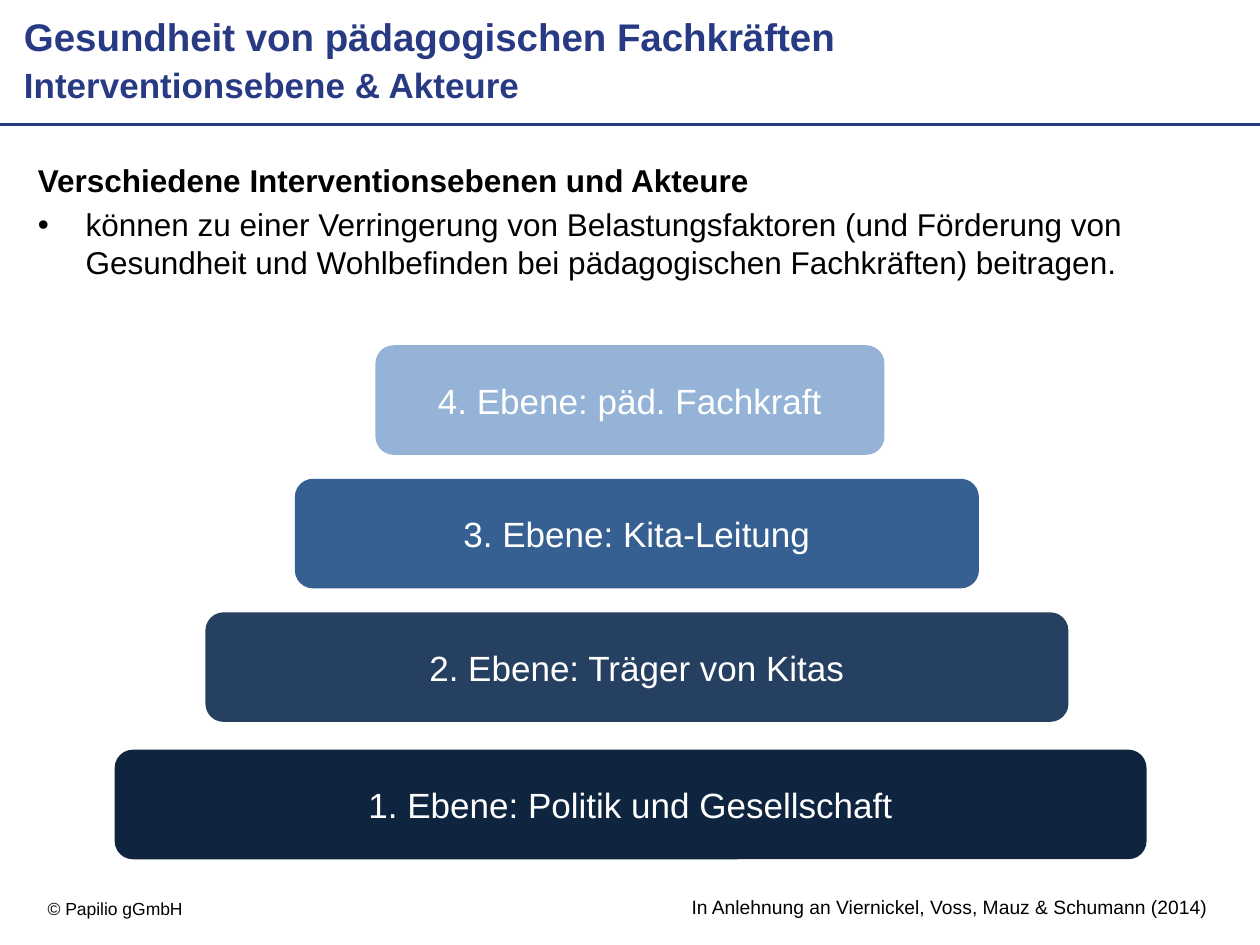
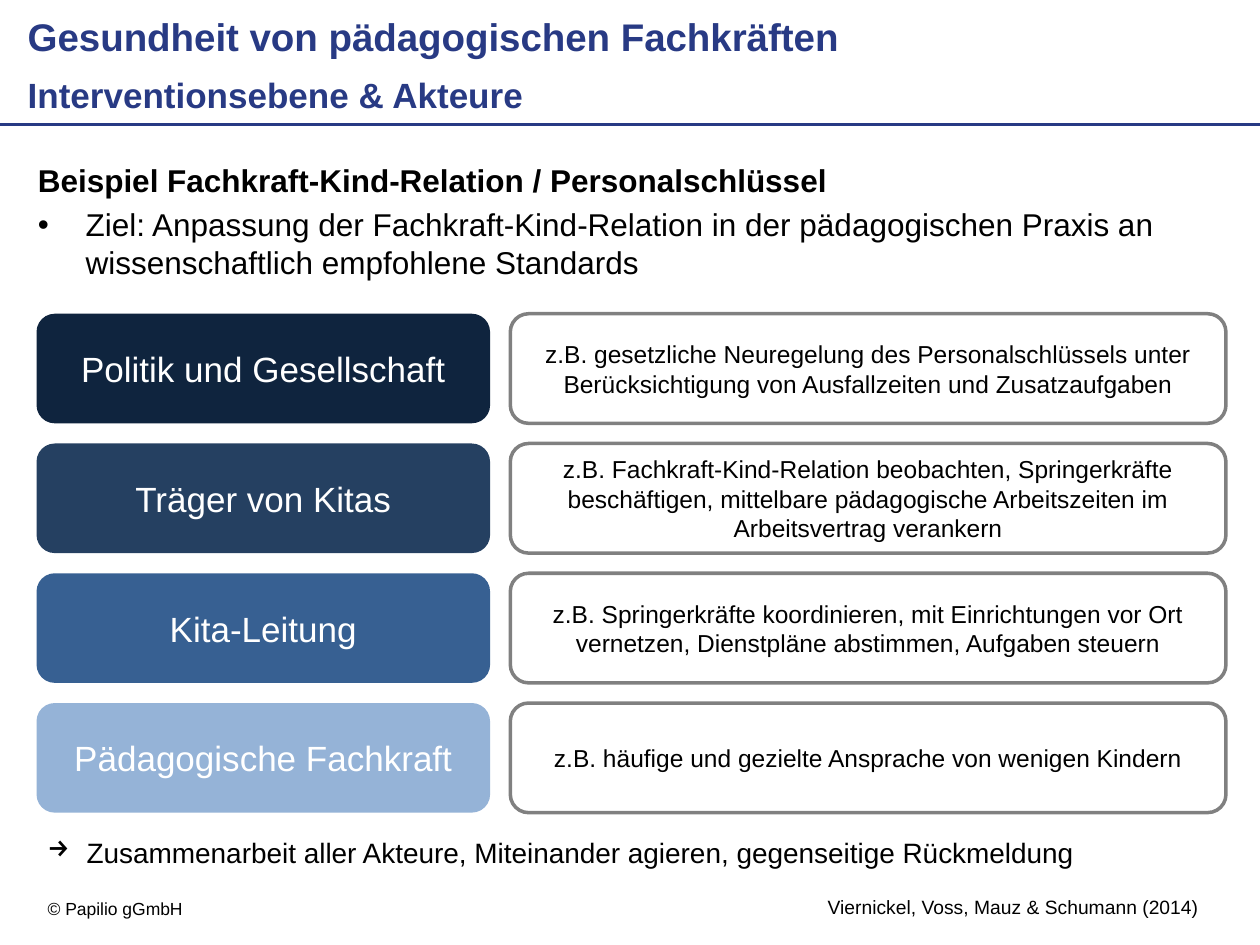
"""Build two slides on intervention levels for the health of educational staff."""
from dataclasses import dataclass
from typing import Optional

from lxml import etree
from pptx import Presentation
from pptx.dml.color import RGBColor
from pptx.enum.shapes import MSO_CONNECTOR, MSO_SHAPE
from pptx.enum.text import MSO_ANCHOR, MSO_AUTO_SIZE, PP_ALIGN
from pptx.oxml.ns import qn
from pptx.util import Inches, Pt

ROUNDED = MSO_SHAPE.ROUNDED_RECTANGLE
STRAIGHT = MSO_CONNECTOR.STRAIGHT
LEFT, CENTER = PP_ALIGN.LEFT, PP_ALIGN.CENTER
TOP, MIDDLE = MSO_ANCHOR.TOP, MSO_ANCHOR.MIDDLE
NO_FIT = MSO_AUTO_SIZE.NONE
TWO_CONTENT = 3


@dataclass(frozen=True)
class Theme:
    font: str = "Arial"
    brand: str = "283A84"
    ink: str = "000000"
    paper: str = "FFFFFF"
    outline: str = "808080"
    politics: str = "0F243E"
    provider: str = "254061"
    leader: str = "376092"
    staff: str = "95B3D7"
    title: int = 22
    subtitle: int = 20
    body: int = 18
    level: int = 20
    conclusion: int = 16
    detail: int = 14
    source: int = 11
    footer: int = 10
    rule: int = 2


T = Theme()


@dataclass(frozen=True)
class Area:
    x: float
    y: float
    w: float
    h: float

    def lengths(self) -> tuple:
        """Return left, top, width and height as lengths."""
        return tuple(Inches(v) for v in (self.x, self.y, self.w, self.h))


@dataclass(frozen=True)
class Line:
    text: str
    size: int
    color: str = T.ink
    bold: bool = False
    align: PP_ALIGN = LEFT
    bullet: Optional[str] = None
    indent: float = 0
    before: float = 0


@dataclass(frozen=True)
class Page:
    title_area: Area
    subtitle_area: Area
    heading: str
    point: str
    source: str
    source_area: Area


@dataclass(frozen=True)
class Level:
    label: str
    color: str
    area: Area


@dataclass(frozen=True)
class Measure:
    actor: str
    color: str
    example: str


TITLE = "Gesundheit von pädagogischen Fachkräften"
SUBTITLE = "Interventionsebene & Akteure"
BODY_AREA = Area(0.2, 1.23, 9.61, 5.63)
FOOTER_AREA = Area(0.28, 7.08, 2.17, 0.27)
CONCLUSION_AREA = Area(0.28, 6.58, 9.46, 0.37)
BOX_H = 0.87
ROW_TOP, ROW_STEP = 2.49, 1.03
ACTOR_X, ACTOR_W = 0.29, 3.6
EXAMPLE_X, EXAMPLE_W = 4.05, 5.68

LEVELS_PAGE = Page(
    Area(0.09, 0.05, 6.93, 0.49),
    Area(0.09, 0.45, 5.12, 0.47),
    "Verschiedene Interventionsebenen und Akteure",
    "können zu einer Verringerung von Belastungsfaktoren (und Förderung von "
    "Gesundheit und Wohlbefinden bei pädagogischen Fachkräften) beitragen.",
    "In Anlehnung an Viernickel, Voss, Mauz & Schumann (2014)",
    Area(5.39, 7.06, 4.34, 0.29),
)
EXAMPLE_PAGE = Page(
    Area(0.12, 0.05, 7.17, 0.49),
    Area(0.12, 0.53, 4.88, 0.46),
    "Beispiel Fachkraft-Kind-Relation / Personalschlüssel",
    "Ziel: Anpassung der Fachkraft-Kind-Relation in der pädagogischen Praxis an "
    "wissenschaftlich empfohlene Standards",
    "Viernickel, Voss, Mauz & Schumann (2014)",
    Area(6.47, 7.06, 3.18, 0.29),
)
LEVELS = [
    Level("1. Ebene: Politik und Gesellschaft", T.politics, Area(0.91, 5.95, 8.19, BOX_H)),
    Level("2. Ebene: Träger von Kitas", T.provider, Area(1.63, 4.86, 6.85, BOX_H)),
    Level("3. Ebene: Kita-Leitung", T.leader, Area(2.34, 3.8, 5.43, BOX_H)),
    Level("4. Ebene: päd. Fachkraft", T.staff, Area(2.98, 2.74, 4.04, BOX_H)),
]
MEASURES = [
    Measure("Politik und Gesellschaft", T.politics,
            "z.B. gesetzliche Neuregelung des Personalschlüssels unter "
            "Berücksichtigung von Ausfallzeiten und Zusatzaufgaben"),
    Measure("Träger von Kitas", T.provider,
            "z.B. Fachkraft-Kind-Relation beobachten, Springerkräfte beschäftigen, "
            "mittelbare pädagogische Arbeitszeiten im Arbeitsvertrag verankern"),
    Measure("Kita-Leitung", T.leader,
            "z.B. Springerkräfte koordinieren, mit Einrichtungen vor Ort vernetzen, "
            "Dienstpläne abstimmen, Aufgaben steuern"),
    Measure("Pädagogische Fachkraft", T.staff,
            "z.B. häufige und gezielte Ansprache von wenigen Kindern"),
]
CONCLUSION = "Zusammenarbeit aller Akteure, Miteinander agieren, gegenseitige Rückmeldung"


def rgb(color: str) -> RGBColor:
    """Turn a hex string into a colour."""
    return RGBColor.from_string(color)


def set_all(obj, values: dict) -> None:
    """Set each named attribute on an object."""
    for name, value in values.items():
        setattr(obj, name, value)


def write(sp, lines: list[Line], anchor=TOP, wrap: bool = True) -> None:
    """Fill a shape with formatted paragraphs."""
    tf = sp.text_frame
    set_all(tf, {"auto_size": NO_FIT, "word_wrap": wrap, "vertical_anchor": anchor})
    for i, line in enumerate(lines):
        p = tf.add_paragraph() if i else tf.paragraphs[0]
        pPr = p._p.get_or_add_pPr()
        pPr.set("marL", str(Inches(line.indent)))
        pPr.set("indent", str(-Inches(line.indent)))
        if line.bullet:
            etree.SubElement(pPr, qn("a:buChar")).set("char", line.bullet)
        else:
            etree.SubElement(pPr, qn("a:buNone"))
        set_all(p, {"alignment": line.align, "space_before": Pt(line.before)})
        r = p.add_run()
        r.text = line.text
        set_all(r.font, {"name": T.font, "size": Pt(line.size), "bold": line.bold})
        r.font.color.rgb = rgb(line.color)


def place(sp, area: Area, lines: list[Line]) -> None:
    """Move a placeholder and fill it."""
    set_all(sp, dict(zip(("left", "top", "width", "height"), area.lengths())))
    write(sp, lines)


def add_text(slide, area: Area, line: Line, wrap: bool = True) -> None:
    """Add a text box with one paragraph."""
    write(slide.shapes.add_textbox(*area.lengths()), [line], wrap=wrap)


def add_box(slide, area: Area, line: Line, fill: Optional[str] = None) -> None:
    """Add a rounded box, filled or outlined."""
    sp = slide.shapes.add_shape(ROUNDED, *area.lengths())
    sp.shadow.inherit = False
    if fill:
        sp.fill.solid()
        sp.fill.fore_color.rgb = rgb(fill)
        sp.line.fill.background()
    else:
        sp.fill.background()
        sp.line.color.rgb = rgb(T.outline)
        sp.line.width = Pt(T.rule)
    write(sp, [line], MIDDLE)


def add_level(slide, area: Area, label: str, color: str) -> None:
    """Add the coloured box of one level."""
    add_box(slide, area, Line(label, T.level, T.paper, align=CENTER), color)


def add_page(prs, page: Page):
    """Add a slide with header, rule, body text, source and footer."""
    slide = prs.slides.add_slide(prs.slide_layouts[TWO_CONTENT])
    title, subtitle, body = slide.placeholders
    place(title, page.title_area, [Line(TITLE, T.title, T.brand, True)])
    place(subtitle, page.subtitle_area, [Line(SUBTITLE, T.subtitle, T.brand, True)])
    place(body, BODY_AREA, [
        Line(page.heading, T.body, bold=True),
        Line(page.point, T.body, bullet="•", indent=0.38, before=3.6),
    ])
    rule = slide.shapes.add_connector(
        STRAIGHT, Inches(0), Inches(0.99), prs.slide_width, Inches(0.99))
    rule.line.color.rgb = rgb(T.brand)
    rule.line.width = Pt(T.rule)
    etree.SubElement(rule._element.spPr, qn("a:effectLst"))
    add_text(slide, FOOTER_AREA, Line("© Papilio gGmbH", T.footer))
    add_text(slide, page.source_area, Line(page.source, T.source), wrap=False)
    return slide


def build_levels(prs) -> None:
    """Build the pyramid of the four levels."""
    slide = add_page(prs, LEVELS_PAGE)
    for level in LEVELS:
        add_level(slide, level.area, level.label, level.color)


def build_example(prs) -> None:
    """Build the rows that pair each actor with an example."""
    slide = add_page(prs, EXAMPLE_PAGE)
    for i, m in enumerate(MEASURES):
        y = ROW_TOP + i * ROW_STEP
        add_level(slide, Area(ACTOR_X, y, ACTOR_W, BOX_H), m.actor, m.color)
        add_box(slide, Area(EXAMPLE_X, y, EXAMPLE_W, BOX_H),
                Line(m.example, T.detail, align=CENTER))
    add_text(slide, CONCLUSION_AREA,
             Line(CONCLUSION, T.conclusion, bullet="→", indent=0.31))


def main() -> None:
    """Build and save the presentation."""
    prs = Presentation()
    prs.slide_width, prs.slide_height = Inches(10), Inches(7.5)
    build_levels(prs)
    build_example(prs)
    prs.save("out.pptx")


if __name__ == "__main__":
    main()
